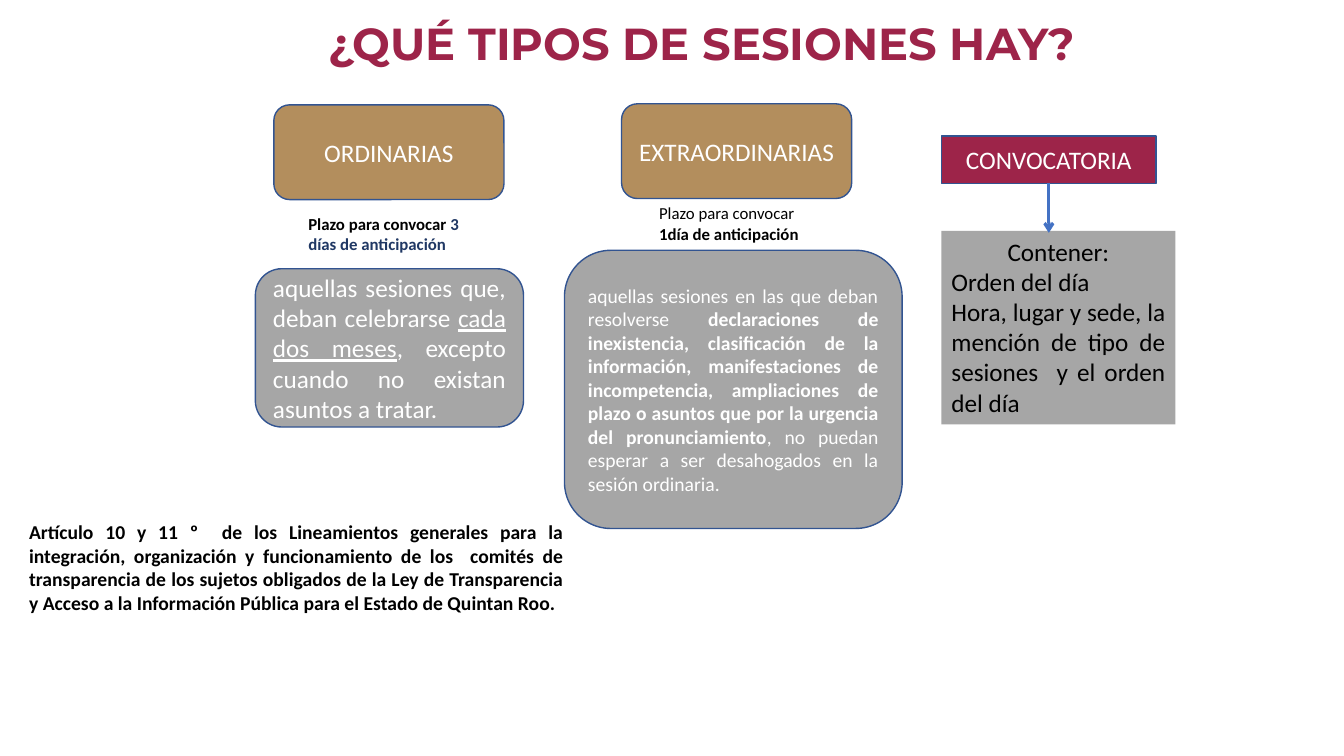
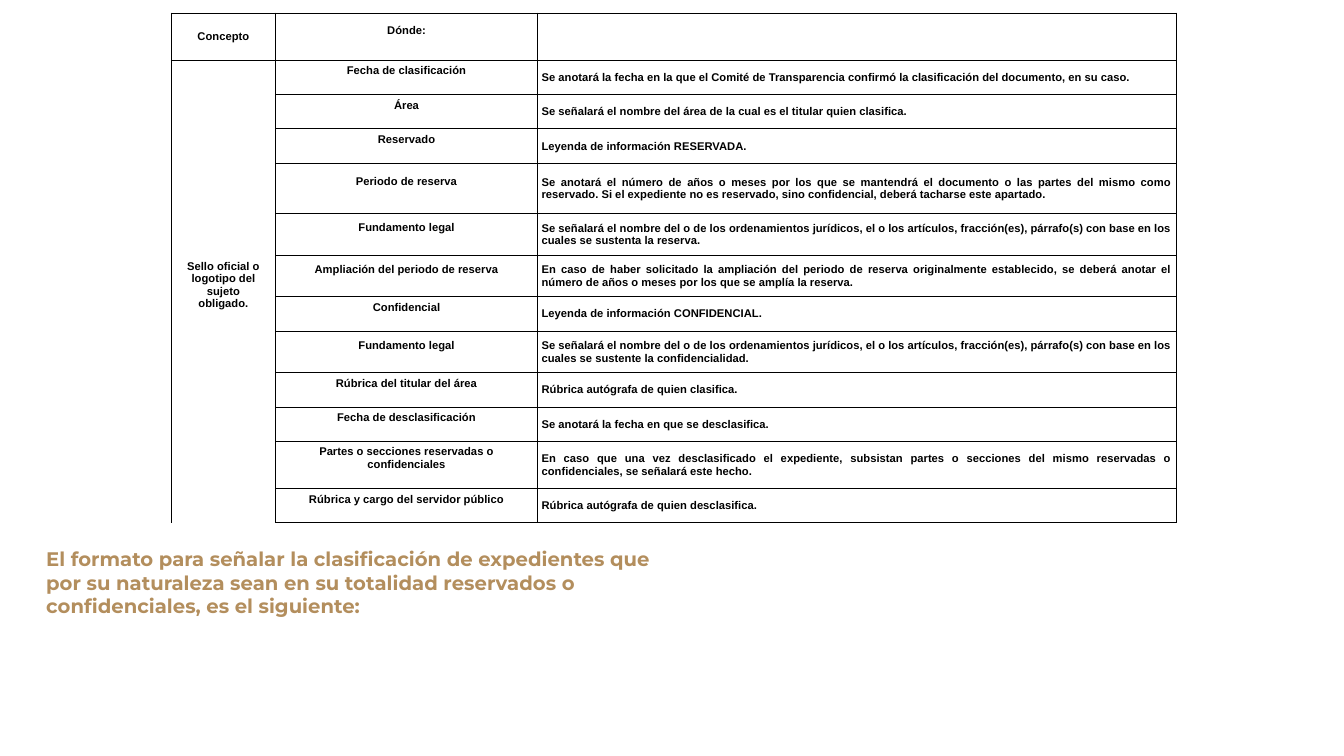
from dataclasses import dataclass
from typing import NamedTuple

from pptx import Presentation
from pptx import util as u
from pptx.dml.color import RGBColor
from pptx.enum import shapes, text
from pptx.oxml.ns import qn
from lxml import etree

WIDE, HIGH = u.Inches(13.33), u.Inches(7.5)
COLS, ROWS = 80, 45

ROUND = shapes.MSO_SHAPE.ROUNDED_RECTANGLE
RECT = shapes.MSO_SHAPE.RECTANGLE
LEFT, MID, JUST = text.PP_ALIGN.LEFT, text.PP_ALIGN.CENTER, text.PP_ALIGN.JUSTIFY
TOP, CENTER, BASE = (text.MSO_ANCHOR.TOP, text.MSO_ANCHOR.MIDDLE,
                     text.MSO_ANCHOR.BOTTOM)


@dataclass(frozen=True)
class Theme:
    wine: str = "9D2449"
    gold: str = "B38E5D"
    gray: str = "A6A6A6"
    edge: str = "325491"
    arrow: str = "4472C4"
    navy: str = "203864"
    black: str = "000000"
    white: str = "FFFFFF"
    body: str = "Calibri"
    head: str = "Montserrat"
    grid: str = "Arial"
    title: int = 32
    large: int = 18
    base: int = 14
    small: int = 12
    cell: int = 8


T = Theme()


class Box(NamedTuple):
    """Left, top, width and height in grid columns and rows."""
    x: float
    y: float
    w: float
    h: float


class Run(NamedTuple):
    text: str
    bold: bool = False
    under: bool = False
    color: str = ""


class Para(NamedTuple):
    runs: list[Run]
    align: int


@dataclass(frozen=True)
class Card:
    box: Box
    fill: str
    paras: list[Para]
    kind: int = ROUND
    size: int = T.large
    color: str = T.white
    edge: str = T.edge
    anchor: int = CENTER


@dataclass(frozen=True)
class Note:
    box: Box
    paras: list[Para]
    size: int
    color: str = T.black
    font: str = T.body
    anchor: int = TOP
    lead: float = 1.0


class Field(NamedTuple):
    high: float
    name: str
    use: str


def across(n: float) -> int:
    return round(WIDE * n / COLS)


def down(n: float) -> int:
    return round(HIGH * n / ROWS)


def place(box: Box) -> tuple[int, int, int, int]:
    return across(box.x), down(box.y), across(box.w), down(box.h)


def rgb(color: str) -> RGBColor:
    return RGBColor.from_string(color)


def plain(words: str, align: int = MID, bold: bool = False) -> list[Para]:
    """One paragraph per line of text."""
    return [Para([Run(line, bold)], align) for line in words.split("\n")]


def write(frame, paras: list[Para], *, size: int, color: str, font: str = T.body,
          lead: float = 1.0) -> None:
    frame.word_wrap = True
    for i, para in enumerate(paras):
        p = frame.add_paragraph() if i else frame.paragraphs[0]
        p.alignment, p.line_spacing = para.align, lead
        for item in para.runs:
            run = p.add_run()
            run.text = item.text
            run.font.name, run.font.size = font, u.Pt(size)
            run.font.bold, run.font.underline = item.bold, item.under
            run.font.color.rgb = rgb(item.color or color)


def draw_card(slide, card: Card):
    shape = slide.shapes.add_shape(card.kind, *place(card.box))
    shape.shadow.inherit = False
    shape.fill.solid()
    shape.fill.fore_color.rgb = rgb(card.fill)
    if card.edge:
        shape.line.color.rgb = rgb(card.edge)
        shape.line.width = u.Pt(1)
    else:
        shape.line.fill.background()
    shape.text_frame.vertical_anchor = card.anchor
    write(shape.text_frame, card.paras, size=card.size, color=card.color)
    return shape


def draw_note(slide, note: Note) -> None:
    frame = slide.shapes.add_textbox(*place(note.box)).text_frame
    frame.vertical_anchor = note.anchor
    write(frame, note.paras, size=note.size, color=note.color, font=note.font,
          lead=note.lead)


def draw_arrow(slide, start, drop: float) -> None:
    """Point down from the bottom of a shape over a number of rows."""
    x, y = start.left + start.width // 2, start.top + start.height
    line = slide.shapes.add_connector(shapes.MSO_CONNECTOR.STRAIGHT,
                                      x, y, x, y + down(drop))
    line.begin_connect(start, 2)
    line.line.color.rgb = rgb(T.arrow)
    line.line.width = u.Pt(2.25)
    etree.SubElement(line.line._get_or_add_ln(), qn("a:tailEnd"), type="arrow")
    etree.SubElement(line._element.spPr, qn("a:effectLst"))


def rule(cell, sides: str) -> None:
    """Draw black borders on the sides named by L, R, T and B."""
    props = cell._tc.get_or_add_tcPr()
    for i, side in enumerate(s for s in "LRTB" if s in sides):
        ln = etree.Element(qn(f"a:ln{side}"), w=str(u.Pt(0.75)))
        fill = etree.SubElement(ln, qn("a:solidFill"))
        etree.SubElement(fill, qn("a:srgbClr"), val=T.black)
        props.insert(i, ln)


def fill_cell(cell, words: str, align: int = MID, sides: str = "LRTB",
              low: float = 0.04) -> None:
    cell.fill.solid()
    cell.fill.fore_color.rgb = rgb(T.white)
    rule(cell, sides)
    cell.vertical_anchor = CENTER
    cell.margin_left = cell.margin_right = cell.margin_top = u.Inches(0.04)
    cell.margin_bottom = u.Inches(low)
    if words:
        write(cell.text_frame, plain(words, align, True), size=T.cell,
              color=T.black, font=T.grid)


CARDS = [
    Card(Box(16.3, 6.24, 13.7, 5.64), T.gold, plain("ORDINARIAS")),
    Card(Box(37, 6.18, 13.7, 5.64), T.gold, plain("EXTRAORDINARIAS")),
    Card(Box(15.2, 16, 15.96, 9.42), T.gray, [Para([
        Run("aquellas sesiones que, deban celebrarse "),
        Run("cada dos meses", under=True),
        Run(", excepto cuando no existan asuntos a tratar. ")], JUST)]),
    Card(Box(33.6, 14.9, 20.1, 16.56), T.gray, [Para([
        Run("aquellas sesiones en las que deban resolverse "),
        Run("declaraciones de inexistencia, clasificación de la información, "
            "manifestaciones de incompetencia, ampliaciones de plazo o asuntos "
            "que por la urgencia del pronunciamiento", bold=True),
        Run(", no puedan esperar a ser desahogados en la sesión ordinaria.")],
        JUST)], size=T.base),
    Card(Box(56.04, 13.74, 13.92, 11.52), T.gray,
         plain("Contener:") + plain(
             "Orden del día\nHora, lugar y sede, la mención de tipo de "
             "sesiones  y el orden del día", JUST),
         kind=RECT, color=T.black, edge="", anchor=TOP),
]
CALL = Card(Box(56.04, 8.1, 12.78, 2.82), T.wine, plain("CONVOCATORIA"), kind=RECT)

NOTES = [
    Note(Box(7.3, 0, 69, 4.5), plain("¿QUÉ TIPOS DE SESIONES HAY?", bold=True),
         T.title, T.wine, T.head, BASE, 0.9),
    Note(Box(17.76, 12.4, 10.86, 3), [Para([
        Run("Plazo para convocar ", True),
        Run("3 días de anticipación", True, color=T.navy)], LEFT)], T.small),
    Note(Box(38.64, 11.8, 10.86, 3), [Para([
        Run("Plazo para convocar "),
        Run("1día de anticipación", True)], LEFT)], T.small),
    Note(Box(1.14, 30.66, 33, 6.24), plain(
        "Artículo 10 y 11 º  de los Lineamientos generales para la integración, "
        "organización y funcionamiento de los  comités de transparencia de los "
        "sujetos obligados de la Ley de Transparencia y Acceso a la Información "
        "Pública para el Estado de Quintan Roo.", JUST, True), T.base),
]
FORMAT = Note(Box(2.16, 32.28, 37.92, 4.86), plain(
    "El formato para señalar la clasificación de expedientes que por su "
    "naturaleza sean en su totalidad reservados o confidenciales, es el "
    "siguiente:", LEFT, True), T.base, T.gold, T.head)

SLIM, PAIR, TALL, HEAD = 2.04, 2.48, 3, 2.82
LOW = 0.17
WIDTHS = [6.2, 15.6, 38]
LEGAL = ("Se señalará el nombre del o de los ordenamientos jurídicos, el o los "
         "artículos, fracción(es), párrafo(s) con base en los cuales se ")
FIELDS = [
    Field(HEAD, "Dónde:", ""),
    Field(SLIM, "Fecha de clasificación",
          "Se anotará la fecha en la que el Comité de Transparencia confirmó la "
          "clasificación del documento, en su caso."),
    Field(SLIM, "Área", "Se señalará el nombre del área de la cual es el titular "
          "quien clasifica."),
    Field(SLIM, "Reservado", "Leyenda de información RESERVADA."),
    Field(TALL, "Periodo de reserva",
          "Se anotará el número de años o meses por los que se mantendrá el "
          "documento o las partes del mismo como reservado. Si el expediente no "
          "es reservado, sino confidencial, deberá tacharse este apartado."),
    Field(PAIR, "Fundamento legal", LEGAL + "sustenta la reserva."),
    Field(PAIR, "Ampliación del periodo de reserva",
          "En caso de haber solicitado la ampliación del periodo de reserva "
          "originalmente establecido, se deberá anotar el número de años o meses "
          "por los que se amplía la reserva."),
    Field(SLIM, "Confidencial", "Leyenda de información CONFIDENCIAL."),
    Field(PAIR, "Fundamento legal", LEGAL + "sustente la confidencialidad."),
    Field(SLIM, "Rúbrica del titular del área",
          "Rúbrica autógrafa de quien clasifica."),
    Field(SLIM, "Fecha de desclasificación",
          "Se anotará la fecha en que se desclasifica."),
    Field(HEAD, "Partes o secciones reservadas o\nconfidenciales",
          "En caso que una vez desclasificado el expediente, subsistan partes o "
          "secciones del mismo reservadas o confidenciales, se señalará este "
          "hecho."),
    Field(SLIM, "Rúbrica y cargo del servidor público",
          "Rúbrica autógrafa de quien desclasifica."),
]


def draw_table(slide) -> None:
    box = Box(10.2, 0.78, sum(WIDTHS), sum(f.high for f in FIELDS))
    table = slide.shapes.add_table(len(FIELDS), len(WIDTHS), *place(box)).table
    table.first_row = table.horz_banding = False
    style = table._tbl.tblPr.find(qn("a:tableStyleId"))
    style.text = "{2D5ABB26-0587-4C30-8999-92F81FD0307C}"
    for col, wide in zip(table.columns, WIDTHS):
        col.width = across(wide)
    for i, field in enumerate(FIELDS):
        table.rows[i].height = down(field.high)
        fill_cell(table.cell(i, 1), field.name, low=LOW)
        fill_cell(table.cell(i, 2), field.use, JUST)
        if i > 1:
            fill_cell(table.cell(i, 0), "", sides="LR")
    fill_cell(table.cell(0, 0), "Concepto")
    seal = table.cell(1, 0)
    seal.merge(table.cell(len(FIELDS) - 1, 0))
    fill_cell(seal, "Sello oficial o\nlogotipo del\nsujeto\nobligado.",
              sides="LRT", low=LOW)


def main() -> None:
    deck = Presentation()
    deck.slide_width, deck.slide_height = WIDE, HIGH
    kinds, form = (deck.slides.add_slide(deck.slide_layouts[6]) for _ in range(2))
    for note in NOTES:
        draw_note(kinds, note)
    for card in CARDS:
        draw_card(kinds, card)
    draw_arrow(kinds, draw_card(kinds, CALL), 2.94)
    draw_table(form)
    draw_note(form, FORMAT)
    deck.save("out.pptx")


if __name__ == "__main__":
    main()
